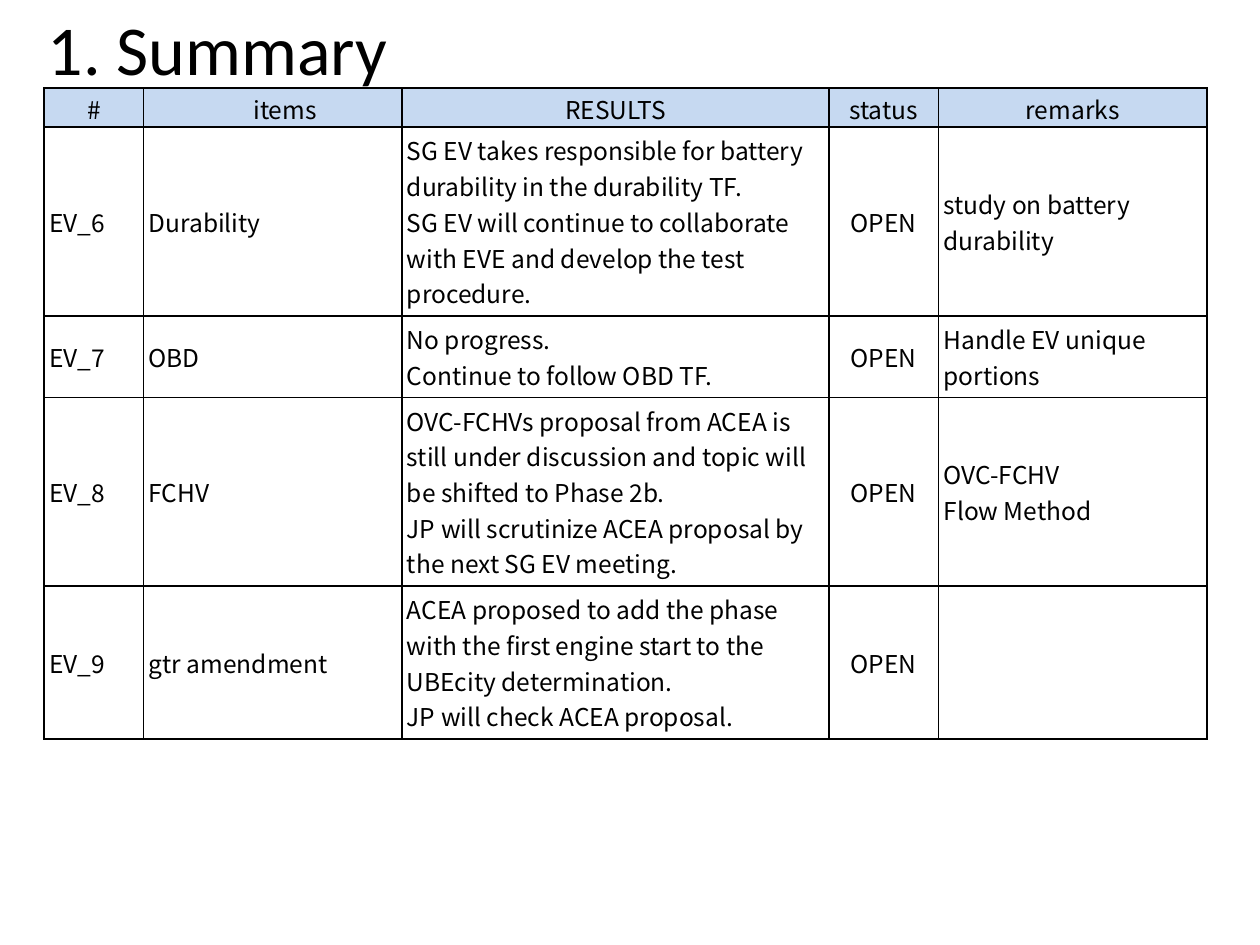
import dataclasses

import pptx
import pptx.dml.color
import pptx.enum.text
import pptx.oxml
import pptx.oxml.ns
import pptx.util
from lxml import etree

Inches = pptx.util.Inches
Pt = pptx.util.Pt
RGB = pptx.dml.color.RGBColor.from_string
ALIGN = pptx.enum.text.PP_ALIGN
MIDDLE = pptx.enum.text.MSO_ANCHOR.MIDDLE


@dataclasses.dataclass(frozen=True)
class Theme:
    """Colours, fonts and sizes of the slide."""
    ink: str = "000000"
    header: str = "C6D9F1"
    body: str = "FFFFFF"
    title_font: str = "Calibri"
    table_font: str = "Noto Sans CJK JP"
    title_size: int = 40
    table_size: int = 14
    border: int = 1


THEME = Theme()
COLUMNS = [0.79, 2.05, 3.39, 0.87, 2.13]
ROWS = [0.31, 0.7, 0.55, 0.47, 0.57]
STATUS = 3
HEADER = ["#", "　items", "RESULTS", "status", "remarks"]
ITEMS = [
    ["EV_6", "Durability",
     ["SG EV takes responsible for battery durability in the durability TF.",
      "SG EV will continue to collaborate with EVE and develop the test procedure."],
     "OPEN", "study on battery durability"],
    ["EV_7", "OBD", ["No progress.", "Continue to follow OBD TF."],
     "OPEN", "Handle EV unique portions"],
    ["EV_8", "FCHV",
     ["OVC-FCHVs proposal from ACEA is still under discussion and topic will "
      "be shifted to Phase 2b.",
      "JP will scrutinize ACEA proposal by the next SG EV meeting."],
     "OPEN", "OVC-FCHV\nFlow Method"],
    ["EV_9", "gtr amendment",
     ["ACEA proposed to add the phase with the first engine start to the "
      "UBEcity determination.",
      "JP will check ACEA proposal."],
     "OPEN", ""],
]


def add_run(p, text, font, size):
    """Add one formatted run to a paragraph."""
    r = p.add_run()
    r.text = text
    r.font.name = font
    r.font.size = Pt(size)
    r.font.color.rgb = RGB(THEME.ink)


def write_cell(cell, content, align):
    """Write paragraphs into a cell, with line breaks inside a paragraph."""
    paragraphs = [content] if isinstance(content, str) else content
    tf = cell.text_frame
    for i, text in enumerate(paragraphs):
        p = tf.add_paragraph() if i else tf.paragraphs[0]
        p.alignment = align
        p.font.size = Pt(THEME.table_size)
        for j, line in enumerate(text.split("\n")):
            if j:
                p.add_line_break()
            if line:
                add_run(p, line, THEME.table_font, THEME.table_size)


def format_cell(cell, fill, margins):
    """Set the borders, fill, margins and anchor of a cell."""
    tc_pr = cell._tc.get_or_add_tcPr()
    qn = pptx.oxml.ns.qn
    for side in ("a:lnL", "a:lnR", "a:lnT", "a:lnB"):
        ln = etree.SubElement(tc_pr, qn(side), w=str(Pt(THEME.border)))
        solid = etree.SubElement(ln, qn("a:solidFill"))
        etree.SubElement(solid, qn("a:srgbClr"), val=THEME.ink)
    cell.fill.solid()
    cell.fill.fore_color.rgb = RGB(fill)
    cell.vertical_anchor = MIDDLE
    (cell.margin_left, cell.margin_top,
     cell.margin_right, cell.margin_bottom) = map(Inches, margins)


def place_title(s, text, box):
    """Place and format the title placeholder."""
    sp = s.shapes.title
    sp.left, sp.top, sp.width, sp.height = map(Inches, box)
    tf = sp.text_frame
    tf.word_wrap = True
    tf.vertical_anchor = MIDDLE
    p = tf.paragraphs[0]
    p.alignment = ALIGN.LEFT
    add_run(p, text, THEME.title_font, THEME.title_size)


def place_summary(s, box):
    """Place the summary table with its header and item rows."""
    frame = s.shapes.add_table(len(ROWS), len(COLUMNS), *map(Inches, box))
    table = frame.table
    table.horz_banding = False
    for column, width in zip(table.columns, COLUMNS):
        column.width = Inches(width)
    for row, height in zip(table.rows, ROWS):
        row.height = Inches(height)
    frame.height = Inches(box[3])
    for i, values in enumerate([HEADER] + ITEMS):
        fill = THEME.body if i else THEME.header
        margins = [0.04] * 4 if i else [0.01, 0.01, 0.01, 0]
        for j, content in enumerate(values):
            cell = table.cell(i, j)
            centred = i == 0 or j == STATUS
            write_cell(cell, content, ALIGN.CENTER if centred else ALIGN.LEFT)
            format_cell(cell, fill, margins)


def main():
    """Build the summary slide and save it."""
    prs = pptx.Presentation()
    prs.slide_width, prs.slide_height = Inches(10), Inches(7.5)
    s = prs.slides.add_slide(prs.slide_layouts[5])
    place_title(s, "1. Summary", (0.28, 0.05, 8.5, 0.65))
    place_summary(s, (0.35, 0.7, sum(COLUMNS), 4.6))
    prs.save("out.pptx")


if __name__ == "__main__":
    main()
